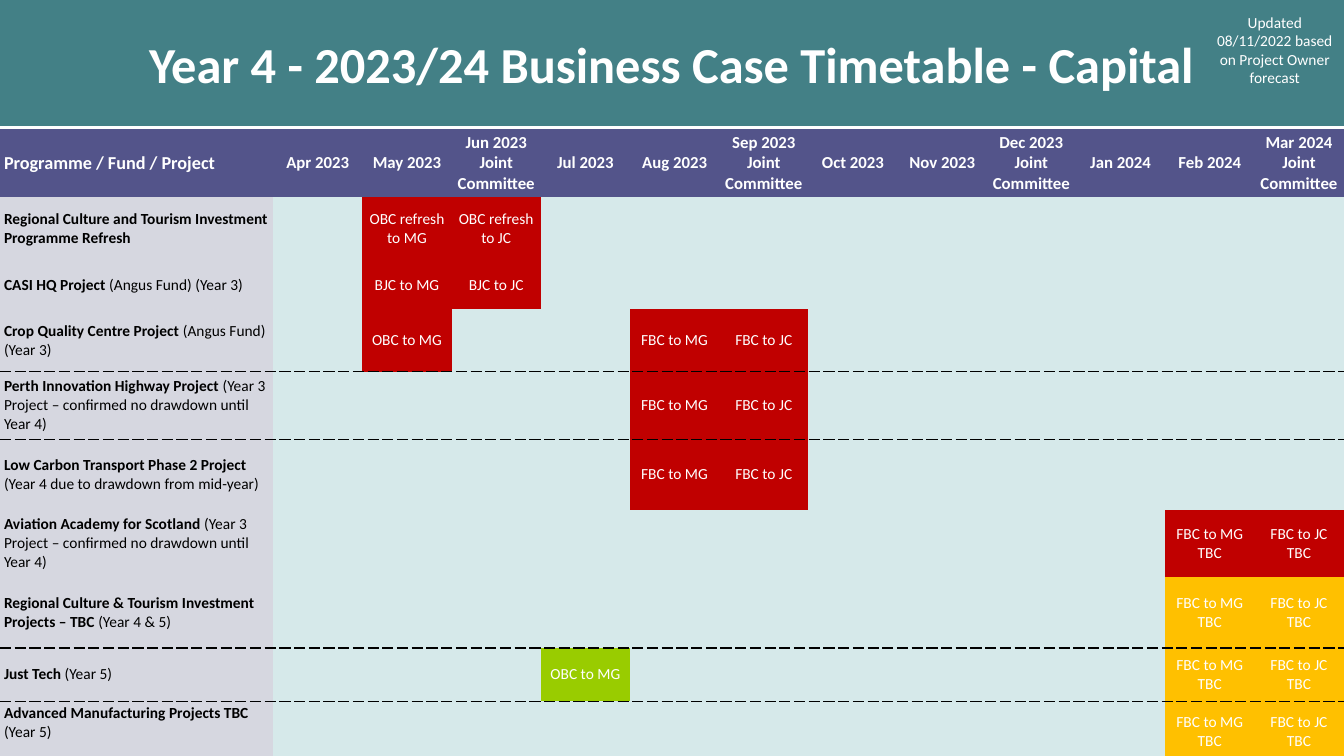
from lxml import etree
from pptx import Presentation
from pptx import util as u
from pptx.dml import color
from pptx.enum import shapes, text
from pptx.oxml import ns

TEAL, INDIGO, LILAC, PALE = "438086", "53548A", "D6D7E0", "D6E9EA"
RED, AMBER, GREEN = "C00000", "FFC000", "99CC00"
WHITE, BLACK = "FFFFFF", "000000"
NO_GRID_STYLE = "{2D5ABB26-0587-4C30-8999-92F81FD0307C}"

MONTHS = [
    "Apr 2023", "May 2023", "Jun 2023\nJoint Committee", "Jul 2023",
    "Aug 2023", "Sep 2023\nJoint Committee", "Oct 2023", "Nov 2023",
    "Dec 2023\nJoint Committee", "Jan 2024", "Feb 2024",
    "Mar 2024\nJoint Committee",
]
MAY, JUN, JUL, AUG, SEP, FEB, MAR = 2, 3, 4, 5, 6, 11, 12
FBC_SUMMER = {AUG: ("FBC to MG", RED), SEP: ("FBC to JC", RED)}
FBC_AMBER = {FEB: ("FBC to MG TBC", AMBER), MAR: ("FBC to JC TBC", AMBER)}

PROJECTS = [
    (8.4, "Regional Culture and Tourism Investment Programme Refresh", "",
     {MAY: ("OBC refresh to MG", RED), JUN: ("OBC refresh to JC", RED)}),
    (6.53, "CASI HQ Project ", "(Angus Fund) (Year 3)",
     {MAY: ("BJC to MG", RED), JUN: ("BJC to JC", RED)}),
    (8.27, "Crop Quality Centre Project ", "(Angus Fund) (Year 3)",
     {MAY: ("OBC to MG", RED), **FBC_SUMMER}),
    (8.93, "Perth Innovation Highway Project ",
     "(Year 3 Project – confirmed no drawdown until Year 4)", FBC_SUMMER),
    (9.33, "Low Carbon Transport Phase 2 Project ",
     "(Year 4 due to drawdown from mid-year)", FBC_SUMMER),
    (8.93, "Aviation Academy for Scotland ",
     "(Year 3 Project – confirmed no drawdown until Year 4)",
     {FEB: ("FBC to MG TBC", RED), MAR: ("FBC to JC TBC", RED)}),
    (9.33, "Regional Culture & Tourism Investment Projects – TBC ",
     "(Year 4 & 5)", FBC_AMBER),
    (7.07, "Just Tech ", "(Year 5)", {JUL: ("OBC to MG", GREEN), **FBC_AMBER}),
    (8, "Advanced Manufacturing Projects TBC ", "(Year 5)", FBC_AMBER),
]
HEADER_HEIGHT, LABEL_WIDTH = 8.93, 20.33
DASHED_BELOW = (3, 7)


def rgb(value):
    return color.RGBColor.from_string(value)


class Board:
    font = "Calibri"

    def __init__(self, presentation):
        self.width = presentation.slide_width
        self.height = presentation.slide_height
        self.slide = presentation.slides.add_slide(presentation.slide_layouts[6])

    def across(self, percent):
        return round(self.width * percent / 100)

    def down(self, percent):
        return round(self.height * percent / 100)

    def place(self, left, top, width, height):
        return (self.across(left), self.down(top),
                self.across(width), self.down(height))

    def format(self, frame, size, ink, bold=False, centred=True):
        for paragraph in frame.paragraphs:
            paragraph.alignment = (
                text.PP_ALIGN.CENTER if centred else text.PP_ALIGN.LEFT)
            for run in paragraph.runs:
                run.font.name = self.font
                run.font.size = u.Pt(size)
                run.font.bold = bold
                run.font.color.rgb = rgb(ink)

    def banner(self, box, words, size, fill):
        shape = self.slide.shapes.add_shape(
            shapes.MSO_SHAPE.RECTANGLE, *self.place(*box))
        shape.shadow.inherit = False
        shape.fill.solid()
        shape.fill.fore_color.rgb = rgb(fill)
        shape.line.fill.background()
        frame = shape.text_frame
        frame.text = words
        frame.vertical_anchor = text.MSO_ANCHOR.MIDDLE
        self.format(frame, size, WHITE, bold=True)

    def note(self, box, words, size):
        frame = self.slide.shapes.add_textbox(*self.place(*box)).text_frame
        frame.word_wrap = True
        frame.text = words
        self.format(frame, size, WHITE)

    def table(self, box, column_widths, row_heights):
        table = self.slide.shapes.add_table(
            len(row_heights), len(column_widths), *self.place(*box)).table
        table.first_row = table.horz_banding = False
        table._tbl.tblPr.find(ns.qn("a:tableStyleId")).text = NO_GRID_STYLE
        for column, width in zip(table.columns, column_widths):
            column.width = self.across(width)
        for row, height in zip(table.rows, row_heights):
            row.height = self.down(height)
        return table

    def cell(self, cell, fill, words="", size=11, ink=WHITE, bold=False,
             centred=True):
        cell.fill.solid()
        cell.fill.fore_color.rgb = rgb(fill)
        cell.vertical_anchor = text.MSO_ANCHOR.MIDDLE
        cell.margin_left = cell.margin_right = u.Inches(0.04)
        cell.margin_top = cell.margin_bottom = u.Inches(0.02)
        if words:
            cell.text_frame.text = words
            self.format(cell.text_frame, size, ink, bold, centred)

    def label(self, cell, name, detail):
        self.cell(cell, LILAC, name, ink=BLACK, bold=True, centred=False)
        if detail:
            run = cell.text_frame.paragraphs[0].add_run()
            run.text = detail
            run.font.name = self.font
            run.font.size = u.Pt(11)
            run.font.bold = False
            run.font.color.rgb = rgb(BLACK)

    def dashed_edge(self, cell, side):
        line = etree.Element(ns.qn("a:" + side), w=str(u.Pt(1)))
        fill = etree.SubElement(line, ns.qn("a:solidFill"))
        etree.SubElement(fill, ns.qn("a:srgbClr"), val=BLACK)
        etree.SubElement(line, ns.qn("a:prstDash"), val="dash")
        cell._tc.get_or_add_tcPr().insert(0, line)


def add_timetable(board):
    month_width = (100 - LABEL_WIDTH) / len(MONTHS)
    widths = [LABEL_WIDTH] + [month_width] * len(MONTHS)
    heights = [HEADER_HEIGHT] + [project[0] for project in PROJECTS]
    table = board.table((0, 17.07, 100, sum(heights)), widths, heights)

    board.cell(table.cell(0, 0), INDIGO, "Programme / Fund / Project", 13,
               bold=True, centred=False)
    for column, month in enumerate(MONTHS, 1):
        board.cell(table.cell(0, column), INDIGO, month, 12, bold=True)

    for row, (_, name, detail, milestones) in enumerate(PROJECTS, 1):
        board.label(table.cell(row, 0), name, detail)
        for column in range(1, len(widths)):
            words, fill = milestones.get(column, ("", PALE))
            board.cell(table.cell(row, column), fill, words)
    table.cell(len(PROJECTS), 0).margin_bottom = u.Inches(0.21)

    for row in DASHED_BELOW:
        for column in range(len(widths)):
            board.dashed_edge(table.cell(row, column), "lnB")
            board.dashed_edge(table.cell(row + 1, column), "lnT")


def main():
    presentation = Presentation()
    presentation.slide_width = u.Inches(13.33)
    presentation.slide_height = u.Inches(7.5)
    board = Board(presentation)
    board.banner((0, 0, 100, 16.67),
                 "Year 4 - 2023/24 Business Case Timetable - Capital", 36, TEAL)
    add_timetable(board)
    board.note((89.7, 1.07, 10.3, 13.87),
               "Updated 08/11/2022 based on Project Owner forecast", 11)
    presentation.save("out.pptx")


if __name__ == "__main__":
    main()
